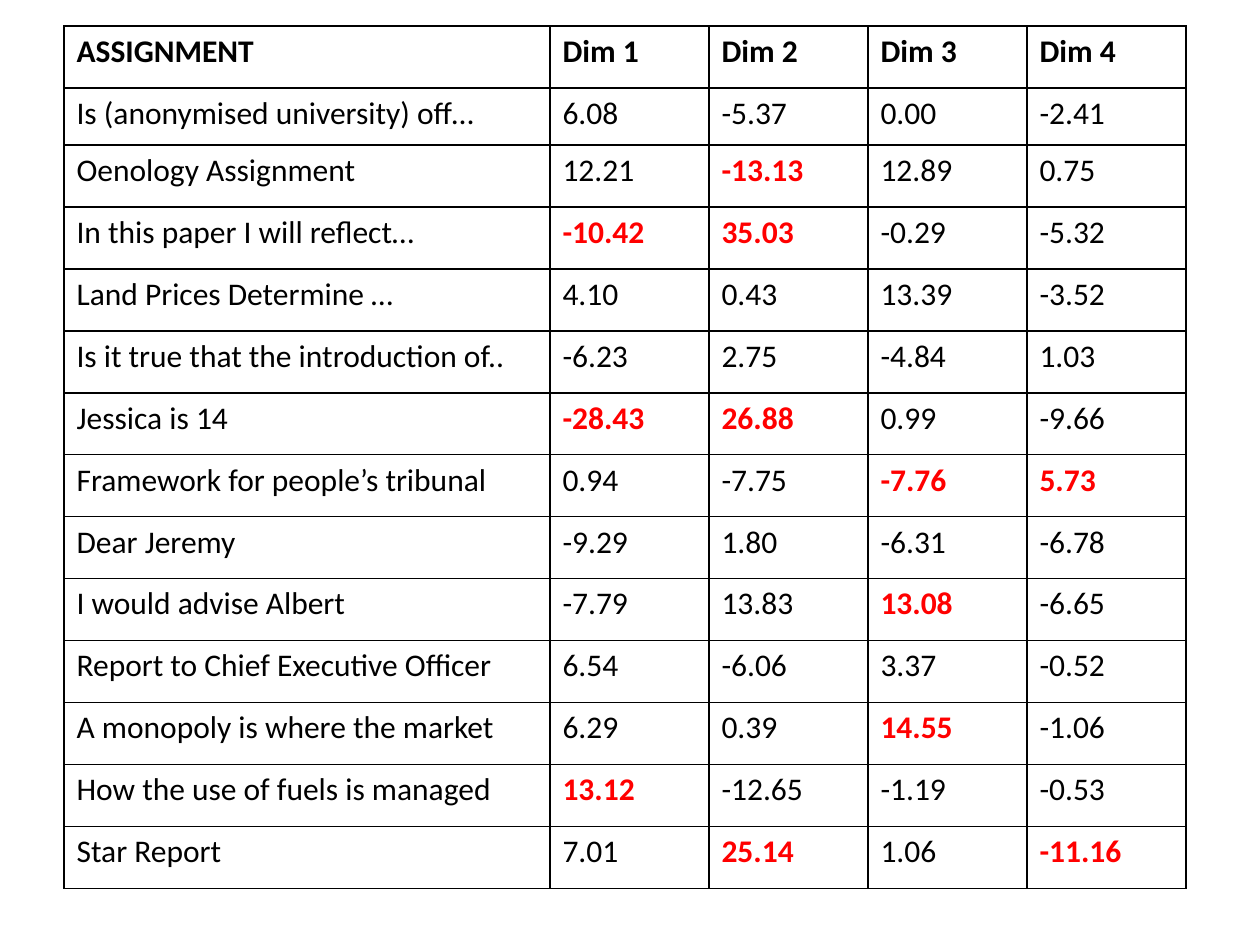
from lxml.etree import SubElement
from pptx import Presentation
from pptx.dml.color import RGBColor
from pptx.oxml.ns import qn
from pptx.util import Emu, Pt

PX = 914400 // 126
BLACK, RED = "000000", "FF0000"


def px(n):
    return Emu(n * PX)


def add_borders(cell, color, width):
    tcPr = cell._tc.get_or_add_tcPr()
    for side in ("a:lnL", "a:lnR", "a:lnT", "a:lnB"):
        ln = SubElement(tcPr, qn(side), w=str(Pt(width)))
        SubElement(SubElement(ln, qn("a:solidFill")), qn("a:srgbClr"), val=color)


# Table content; a trailing * marks a highlighted score
rows = [
    ("ASSIGNMENT", "Dim 1", "Dim 2", "Dim 3", "Dim 4"),
    ("Is (anonymised university) off…", "6.08", "-5.37", "0.00", "-2.41"),
    ("Oenology Assignment", "12.21", "-13.13*", "12.89", "0.75"),
    ("In this paper I will reflect…", "-10.42*", "35.03*", "-0.29", "-5.32"),
    ("Land Prices Determine …", "4.10", "0.43", "13.39", "-3.52"),
    ("Is it true that the introduction of..", "-6.23", "2.75", "-4.84", "1.03"),
    ("Jessica is 14", "-28.43*", "26.88*", "0.99", "-9.66"),
    ("Framework for people’s tribunal", "0.94", "-7.75", "-7.76*", "5.73*"),
    ("Dear Jeremy", "-9.29", "1.80", "-6.31", "-6.78"),
    ("I would advise Albert", "-7.79", "13.83", "13.08*", "-6.65"),
    ("Report to Chief Executive Officer", "6.54", "-6.06", "3.37", "-0.52"),
    ("A monopoly is where the market", "6.29", "0.39", "14.55*", "-1.06"),
    ("How the use of fuels is managed", "13.12*", "-12.65", "-1.19", "-0.53"),
    ("Star Report", "7.01", "25.14*", "1.06", "-11.16*"),
]
col_widths = [486] + [159] * 4
row_heights = [62, 57] + [62] * 12

# Slide
prs = Presentation()
prs.slide_width, prs.slide_height = px(1260), px(945)
s = prs.slides.add_slide(prs.slide_layouts[6])

# Table grid
table = s.shapes.add_table(len(rows), len(col_widths), px(64), px(26),
                           px(sum(col_widths)), px(sum(row_heights))).table
table.first_row = False
table.horz_banding = False
for col, width in zip(table.columns, col_widths):
    col.width = px(width)
for row, height in zip(table.rows, row_heights):
    row.height = px(height)

# Cells
for i, values in enumerate(rows):
    for j, value in enumerate(values):
        cell = table.cell(i, j)
        add_borders(cell, BLACK, 1)
        cell.fill.background()
        marked = value.endswith("*")
        r = cell.text_frame.paragraphs[0].add_run()
        r.text = value.rstrip("*")
        r.font.name = "Calibri"
        r.font.size = Pt(18)
        r.font.bold = i == 0 or marked
        r.font.color.rgb = RGBColor.from_string(RED if marked else BLACK)

prs.save("out.pptx")
